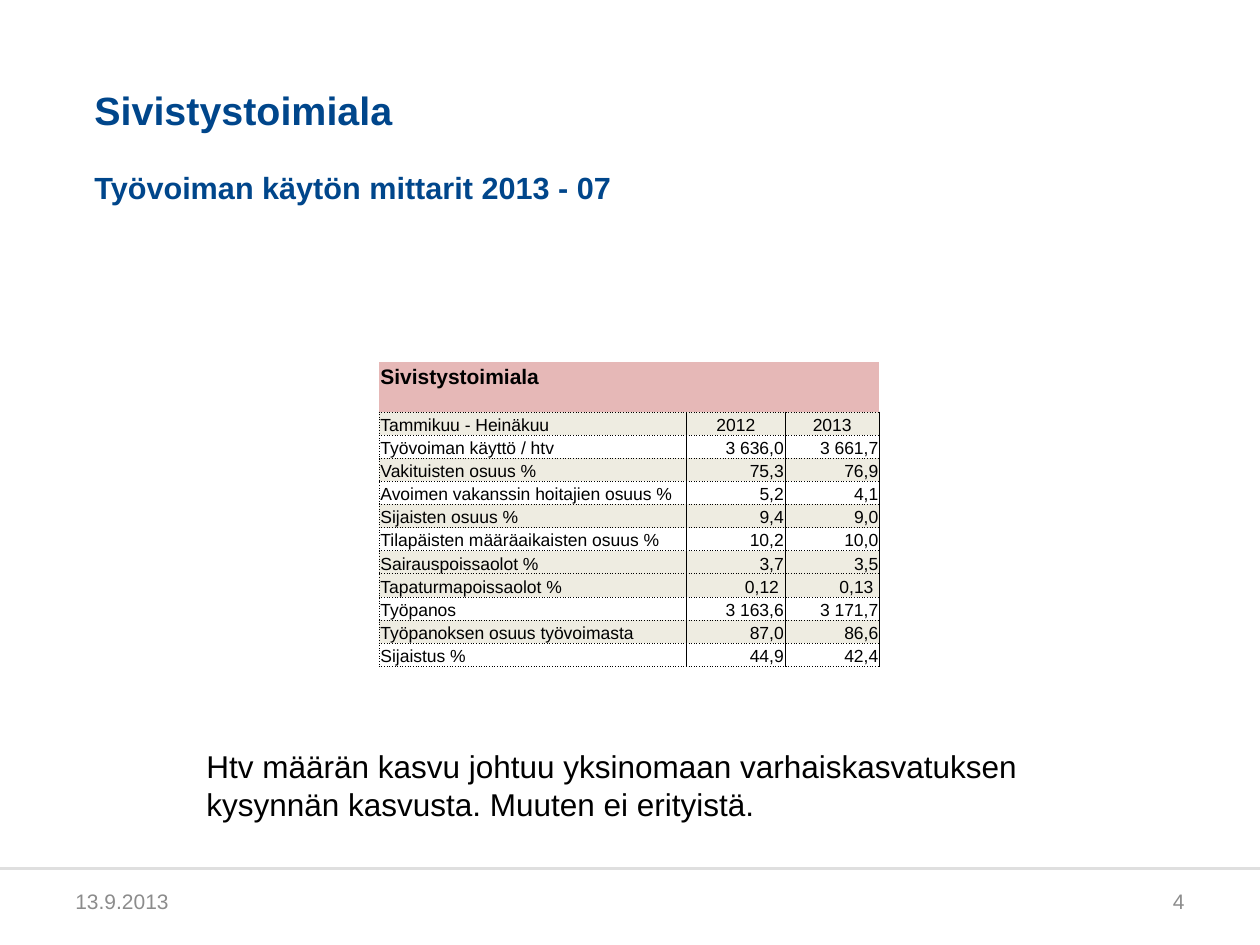
from lxml import etree
from pptx import Presentation
from pptx.dml.color import RGBColor
from pptx.enum.shapes import MSO_CONNECTOR, MSO_SHAPE
from pptx.enum.text import MSO_ANCHOR, MSO_AUTO_SIZE, PP_ALIGN
from pptx.oxml import parse_xml
from pptx.oxml.ns import nsdecls, qn
from pptx.util import Inches, Pt

UNIT = 0.5  # grid of 20 columns by 15 rows on a 10 x 7.5 inch slide
COLS, ROWS = 20, 15
BLUE, GREY, BLACK, WHITE = "00468B", "8C8C8C", "000000", "FFFFFF"
RULE, PINK, BEIGE = "DFDFDF", "E6B8B7", "EEECE1"

HEADING = "Sivistystoimiala"
MEASURES = [  # label, 2012, 2013, shaded
    ("Tammikuu - Heinäkuu", "2012", "2013", True),
    ("Työvoiman käyttö / htv", "3 636,0", "3 661,7", False),
    ("Vakituisten osuus %", "75,3", "76,9", True),
    ("Avoimen vakanssin hoitajien osuus %", "5,2", "4,1", False),
    ("Sijaisten osuus %", "9,4", "9,0", True),
    ("Tilapäisten määräaikaisten osuus %", "10,2", "10,0", False),
    ("Sairauspoissaolot %", "3,7", "3,5", True),
    ("Tapaturmapoissaolot %", "0,12 ", "0,13 ", True),
    ("Työpanos", "3 163,6", "3 171,7", False),
    ("Työpanoksen osuus työvoimasta", "87,0", "86,6", True),
    ("Sijaistus %", "44,9", "42,4", False),
]


def color(hex_code):
    return RGBColor.from_string(hex_code)


def grid(*lengths):
    return [Inches(n * UNIT) for n in lengths]


class SlideBuilder:
    font = "Arial"

    def __init__(self, prs):
        self.s = prs.slides.add_slide(prs.slide_layouts[6])

    def add_run(self, p, text, size, hex_code=BLACK, bold=False, align=None):
        p.alignment = align
        r = p.add_run()
        r.text = text
        style = {"name": self.font, "size": Pt(size), "bold": bold}
        for key, value in style.items():
            setattr(r.font, key, value)
        r.font.color.rgb = color(hex_code)

    def text(self, box, paragraphs, gap=0, **frame):
        tf = self.s.shapes.add_textbox(*grid(*box)).text_frame
        for key, value in {"word_wrap": True, **frame}.items():
            setattr(tf, key, value)
        for i, fmt in enumerate(paragraphs):
            p = tf.add_paragraph() if i else tf.paragraphs[0]
            if i:
                p.space_before = Pt(gap)
            self.add_run(p, **fmt)

    def band(self, box, fill):
        sp = self.s.shapes.add_shape(MSO_SHAPE.RECTANGLE, *grid(*box))
        sp.fill.solid()
        sp.fill.fore_color.rgb = color(fill)
        sp.line.fill.background()
        sp.shadow.inherit = False
        effects = sp._element.spPr.find(qn("a:effectLst"))
        effects.append(parse_xml(
            f'<a:outerShdw {nsdecls("a")} blurRad="{Pt(3.1)}" dist="{Pt(1.8)}" dir="5400000">'
            f'<a:srgbClr val="{BLACK}"><a:alpha val="35000"/></a:srgbClr></a:outerShdw>'))

    def line(self, start, end, hex_code, width):
        ln = self.s.shapes.add_connector(MSO_CONNECTOR.STRAIGHT, *grid(*start, *end))
        ln.line.color.rgb = color(hex_code)
        ln.line.width = Pt(width)
        etree.SubElement(ln._element.spPr, qn("a:effectLst"))

    def border(self, cell, dashes):
        """dashes maps each side (L, R, T, B) to a dash style; a missing side is bare."""
        tc_pr = cell._tc.get_or_add_tcPr()
        for side in "LRTB":
            ln = etree.SubElement(tc_pr, qn(f"a:ln{side}"), w=str(Pt(0.5)))
            if side not in dashes:
                etree.SubElement(ln, qn("a:noFill"))
                continue
            solid = etree.SubElement(ln, qn("a:solidFill"))
            etree.SubElement(solid, qn("a:srgbClr"), val=BLACK)
            etree.SubElement(ln, qn("a:prstDash"), val=dashes[side])

    def cell(self, cell, fill, dashes, text="", **fmt):
        margins = {"margin_left": 0.01, "margin_right": 0.01,
                   "margin_top": 0.01, "margin_bottom": 0}
        for key, value in margins.items():
            setattr(cell, key, Inches(value))
        cell.vertical_anchor = MSO_ANCHOR.BOTTOM
        self.border(cell, dashes)
        if fill:
            cell.fill.solid()
            cell.fill.fore_color.rgb = color(fill)
        else:
            cell.fill.background()
        p = cell.text_frame.paragraphs[0]
        if text:
            self.add_run(p, text, **fmt)
        else:  # small end mark keeps an empty row low
            etree.SubElement(p._p, qn("a:endParaRPr"), sz="1000")

    def table(self, box, widths, heights, heading, measures):
        tbl = self.s.shapes.add_table(len(heights), len(widths), *grid(*box)).table
        for flag in ("first_row", "horz_banding"):
            setattr(tbl, flag, False)
        for col, width in zip(tbl.columns, grid(*widths)):
            col.width = width
        for row, height in zip(tbl.rows, grid(*heights)):
            row.height = height
        # Heading band of two rows
        for j in range(len(widths)):
            self.cell(tbl.cell(0, j), PINK, {}, "" if j else heading, size=12, bold=True)
            self.cell(tbl.cell(1, j), PINK, {"B": "dot"})
        # Year row and measures
        for i, (*values, shaded) in enumerate(measures):
            for j, value in enumerate(values):
                dashes = {"L": "solid" if j else "dot", "R": "solid", "T": "dot", "B": "dot"}
                number_align = PP_ALIGN.RIGHT if i else PP_ALIGN.CENTER
                self.cell(tbl.cell(i + 2, j), BEIGE if shaded else None, dashes, value,
                          size=10, align=number_align if j else PP_ALIGN.LEFT)


def main():
    prs = Presentation()
    prs.slide_width, prs.slide_height = grid(COLS, ROWS)
    slide = SlideBuilder(prs)

    # Footer
    slide.band((0, 13.8, COLS, 1.2), WHITE)
    slide.line((0, 13.78), (COLS, 13.78), RULE, 1.75)
    for left, text, align in ((1, "13.9.2013", PP_ALIGN.LEFT), (14.34, "4", PP_ALIGN.RIGHT)):
        slide.text((left, 13.9, 4.66, 0.8),
                   [dict(text=text, size=12, hex_code=GREY, align=align)],
                   vertical_anchor=MSO_ANCHOR.MIDDLE)

    # Title and subtitle
    no_margins = dict.fromkeys(
        ("margin_left", "margin_right", "margin_top", "margin_bottom"), 0)
    slide.text((1.5, 1.52, 18.12, 1.74),
               [dict(text=HEADING, size=22.5, hex_code=BLUE, bold=True),
                dict(text="Työvoiman käytön mittarit 2013 - 07", size=17.5,
                     hex_code=BLUE, bold=True)],
               gap=20, vertical_anchor=MSO_ANCHOR.BOTTOM, **no_margins)

    # Comment
    slide.text((3.08, 11.76, 14.22, 1.42),
               [dict(text="Htv määrän kasvu johtuu yksinomaan varhaiskasvatuksen "
                          "kysynnän kasvusta. Muuten ei erityistä.", size=18)],
               auto_size=MSO_AUTO_SIZE.SHAPE_TO_FIT_TEXT)

    # Measures table
    height, head = 4.84, [0.44, 0.36]
    row = (height - sum(head)) / len(MEASURES)
    slide.table((6.02, 5.74, 7.94, height), (4.88, 1.56, 1.5),
                head + [row] * len(MEASURES), HEADING, MEASURES)

    prs.save("out.pptx")


if __name__ == "__main__":
    main()
